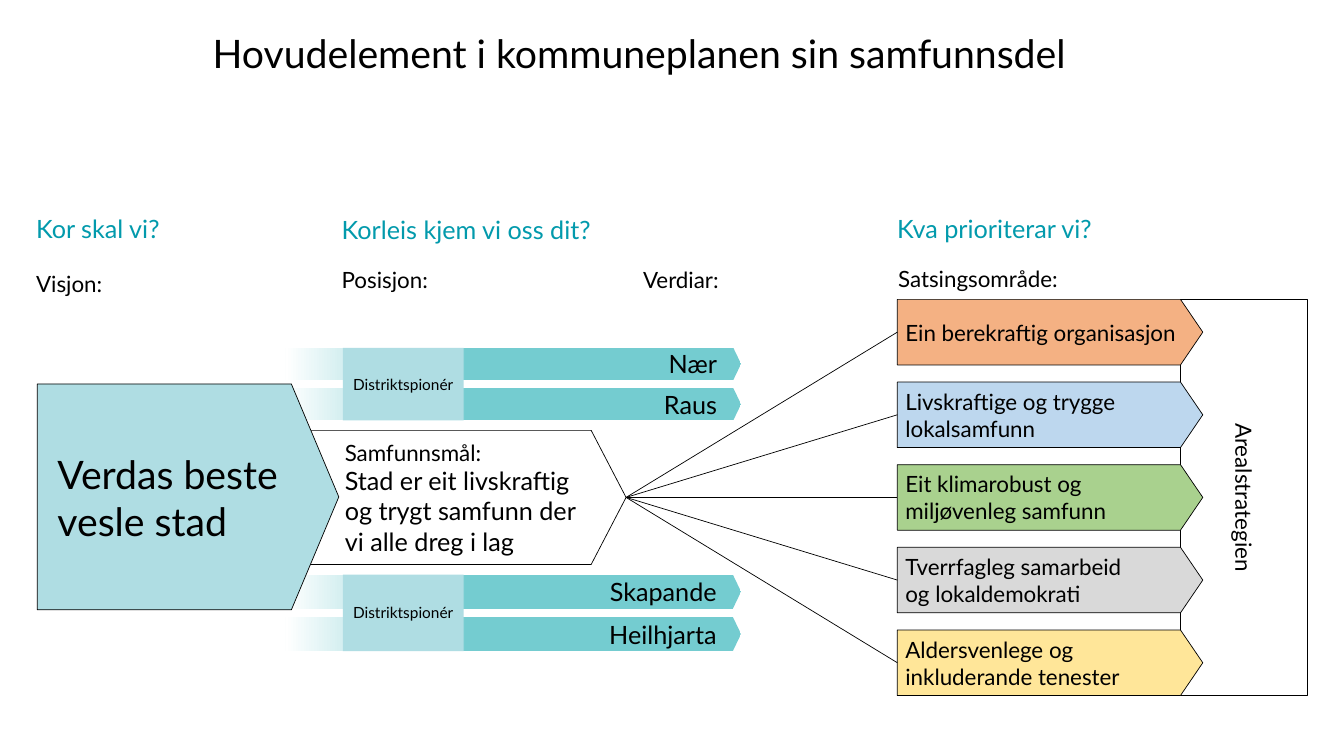
from copy import deepcopy

from pptx import Presentation
from pptx.dml.color import RGBColor
from pptx.enum.shapes import MSO_CONNECTOR, MSO_SHAPE
from pptx.enum.text import MSO_ANCHOR, MSO_AUTO_SIZE, PP_ALIGN
from pptx.oxml.ns import qn
from pptx.oxml.xmlchemy import OxmlElement
from pptx.util import Inches, Pt

FONT = "Lato"
BLACK = RGBColor(0x00, 0x00, 0x00)
WHITE = RGBColor(0xFF, 0xFF, 0xFF)
HEADING_TEAL = RGBColor(0x02, 0x9A, 0xAC)
VALUE_TEAL = RGBColor(0x74, 0xCC, 0xD0)
PALE_TEAL = RGBColor(0xAF, 0xDD, 0xE3)
ORANGE = RGBColor(0xF4, 0xB1, 0x83)
BLUE = RGBColor(0xBD, 0xD7, 0xEE)
GREEN = RGBColor(0xA9, 0xD1, 0x8E)
GREY = RGBColor(0xD9, 0xD9, 0xD9)
YELLOW = RGBColor(0xFF, 0xE6, 0x99)

PRIORITIES = [
    ("Ein berekraftig organisasjon", ORANGE),
    ("Livskraftige og trygge lokalsamfunn", BLUE),
    ("Eit klimarobust og miljøvenleg samfunn", GREEN),
    ("Tverrfagleg samarbeid\nog lokaldemokrati", GREY),
    ("Aldersvenlege og inkluderande tenester", YELLOW),
]
QUESTIONS = [
    (0.26, 2.07, 1.47, "Kor skal vi?"),
    (3.29, 2.08, 3.12, "Korleis kjem vi oss dit?"),
    (8.8, 2.07, 2.55, "Kva prioriterar vi?"),
]
LABELS = [
    (0.26, 2.63, 2.76, "Visjon:"),
    (3.29, 2.59, 3.58, "Posisjon:"),
    (6.28, 2.59, 1.26, "Verdiar:"),
    (8.81, 2.58, 2.12, "Satsingsområde:"),
]


def apply_format(target, values):
    """Set every named attribute on the target."""
    for name, value in values.items():
        setattr(target, name, value)


def write(shape, runs, color=BLACK, align=PP_ALIGN.LEFT, anchor=MSO_ANCHOR.MIDDLE,
          margins=(0.1, 0.05, 0.1, 0.05)):
    """Write (text, size) runs as one paragraph in the shape."""
    frame = shape.text_frame
    left, top, right, bottom = map(Inches, margins)
    apply_format(frame, {
        "auto_size": MSO_AUTO_SIZE.NONE, "word_wrap": True, "vertical_anchor": anchor,
        "margin_left": left, "margin_top": top,
        "margin_right": right, "margin_bottom": bottom,
    })
    paragraph = frame.paragraphs[0]
    paragraph.alignment = align
    for text, size in runs:
        for index, line in enumerate(text.split("\n")):
            if index:
                paragraph.add_line_break()
            if line:
                run = paragraph.add_run()
                run.text = line
                apply_format(run.font, {"name": FONT, "size": Pt(size)})
                run.font.color.rgb = color


def add_block(slide, kind, box, fill=None, outlined=False, point=None):
    """Add a flat shape, with an optional outline and arrow point."""
    block = slide.shapes.add_shape(kind, *map(Inches, box))
    block.shadow.inherit = False
    if fill is not None:
        block.fill.solid()
        block.fill.fore_color.rgb = fill
    if outlined:
        block.line.color.rgb = BLACK
        block.line.width = Pt(0.5)
    else:
        block.line.fill.background()
    if point is not None:
        block.adjustments[0] = point
    return block


def add_title(slide, box, text):
    """Place and fill the title."""
    title = slide.shapes.title
    apply_format(title, dict(zip(("left", "top", "width", "height"), map(Inches, box))))
    write(title, [(text, 28)], anchor=MSO_ANCHOR.TOP)


def add_headings(slide, headings, height, size, color):
    """Add a row of headings above the columns."""
    for left, top, width, text in headings:
        heading = slide.shapes.add_textbox(*map(Inches, (left, top, width, height)))
        write(heading, [(text, size)], color, anchor=MSO_ANCHOR.TOP)


def fade_left(value_arrow):
    """Fade the arrow from teal to white at its left end."""
    value_arrow.fill.gradient()
    stop_list = value_arrow.element.find(".//" + qn("a:gsLst"))
    stop_list.insert(1, deepcopy(stop_list[0]))
    fades = [(0, VALUE_TEAL), (0.6, VALUE_TEAL), (1, WHITE)]
    for stop, (position, color) in zip(value_arrow.fill.gradient_stops, fades):
        stop.position = position
        stop.color.rgb = color
    value_arrow.fill.gradient_angle = 180


def add_values(slide, box, values):
    """Stack value arrows in the box and cover them with a position badge."""
    left, top, width, height = box
    gap = 0.08
    arrow_height = (height - gap * (len(values) - 1)) / len(values)
    for index, value in enumerate(values):
        arrow_top = top + index * (arrow_height + gap)
        arrow = add_block(slide, MSO_SHAPE.PENTAGON,
                          (left, arrow_top, width, arrow_height), point=0.24)
        fade_left(arrow)
        write(arrow, [(value, 18)], align=PP_ALIGN.RIGHT, margins=(0.1, 0.05, 0.2, 0.05))
    badge = add_block(slide, MSO_SHAPE.RECTANGLE, (left + 0.57, top, 1.2, height), PALE_TEAL)
    write(badge, [("Distriktspionér", 11)], align=PP_ALIGN.CENTER, margins=(0.04,) * 4)


def add_goal(slide, box):
    """Add the arrow with the goal for society."""
    goal = add_block(slide, MSO_SHAPE.PENTAGON, box, WHITE, True, 0.26)
    write(goal, [("Samfunnsmål:\n", 16),
                 ("Stad er eit livskraftig\nog trygt samfunn der\nvi alle dreg i lag", 18)],
          margins=(0.47, 0.05, 0.1, 0.05))
    return goal


def add_vision(slide, box):
    """Add the large vision arrow."""
    vision = add_block(slide, MSO_SHAPE.PENTAGON, box, PALE_TEAL, True, 0.21)
    write(vision, [("Verdas beste vesle stad", 28)], margins=(0.2, 0, 0, 0))


def add_area_strategy(slide, box):
    """Fill the box with a frame turned a quarter clockwise."""
    left, top, width, height = box
    turned = (left + (width - height) / 2, top + (height - width) / 2, height, width)
    strategy = add_block(slide, MSO_SHAPE.RECTANGLE, turned, WHITE, True)
    strategy.rotation = 90
    write(strategy, [("Arealstrategien", 16)], align=PP_ALIGN.CENTER)


def add_priorities(slide, box, goal):
    """Spread priority arrows down the box and join each to the goal."""
    left, top, width, height = box
    arrow_height = 0.65
    pitch = (height - arrow_height) / (len(PRIORITIES) - 1)
    for index, (text, color) in enumerate(PRIORITIES):
        priority = add_block(slide, MSO_SHAPE.PENTAGON,
                             (left, top + index * pitch, width, arrow_height),
                             color, True, 0.34)
        write(priority, [(text, 16)], margins=(0.08, 0, 0, 0))
        branch = slide.shapes.add_connector(MSO_CONNECTOR.STRAIGHT, 0, 0, 0, 0)
        branch.begin_connect(goal, 3)
        branch.end_connect(priority, 1)
        branch.line.color.rgb = BLACK
        branch.line.width = Pt(0.5)
        branch.element.spPr.append(OxmlElement("a:effectLst"))


def build_plan_slide(presentation):
    """Build the overview of the municipal plan."""
    slide = presentation.slides.add_slide(presentation.slide_layouts[5])
    add_title(slide, (2.01, 0.24, 11.89, 0.8), "Hovudelement i kommuneplanen sin samfunnsdel")
    add_headings(slide, QUESTIONS, 0.4, 18, HEADING_TEAL)
    add_headings(slide, LABELS, 0.37, 16, BLACK)
    add_area_strategy(slide, (11.71, 2.97, 1.26, 3.93))
    add_values(slide, (2.83, 3.45, 4.52, 0.72), ["Nær", "Raus"])
    add_values(slide, (2.83, 5.7, 4.52, 0.76), ["Skapande", "Heilhjarta"])
    goal = add_goal(slide, (2.95, 4.27, 3.26, 1.33))
    add_vision(slide, (0.37, 3.81, 2.99, 2.24))
    add_priorities(slide, (8.9, 2.97, 3.03, 3.93), goal)


def main():
    """Create and save the presentation."""
    presentation = Presentation()
    apply_format(presentation, {"slide_width": Inches(13.33), "slide_height": Inches(7.5)})
    build_plan_slide(presentation)
    presentation.save("out.pptx")


if __name__ == "__main__":
    main()
